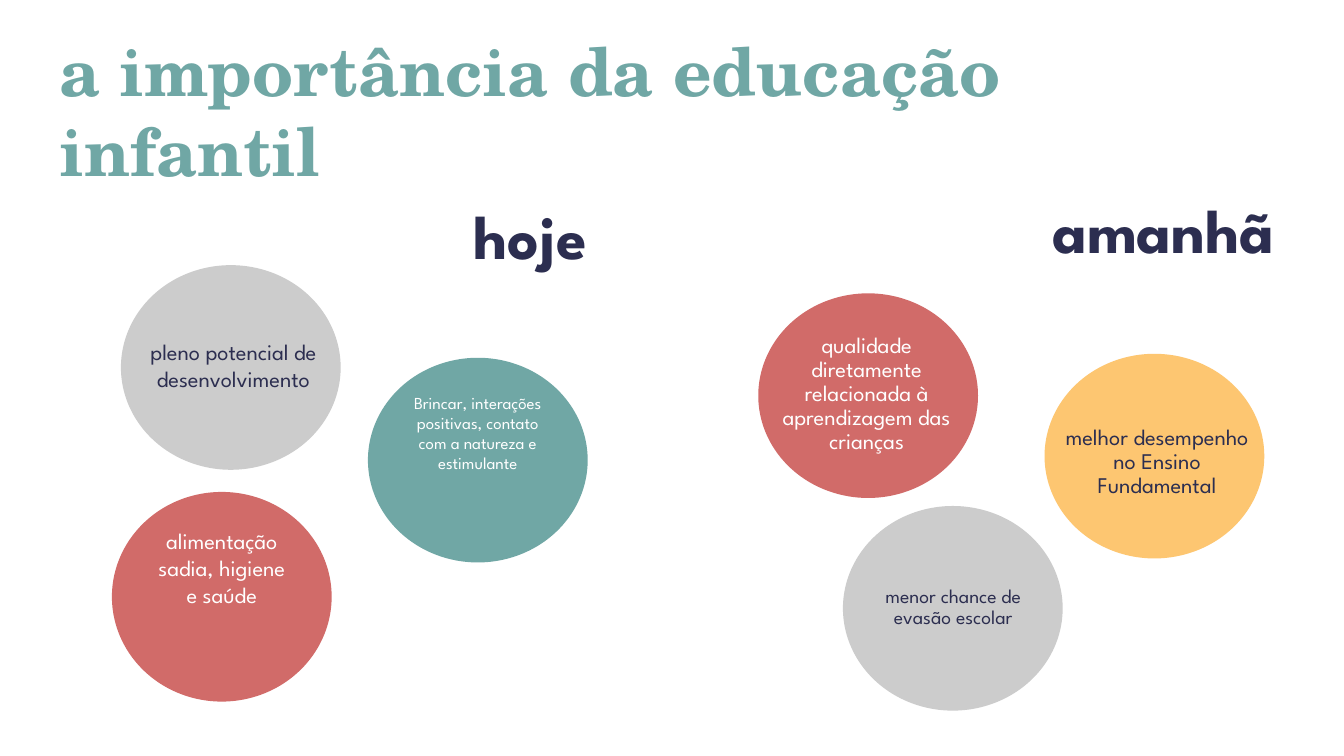
from pptx import Presentation
from pptx.dml.color import RGBColor as RGB
from pptx.enum.shapes import MSO_SHAPE as Preset
from pptx.enum.text import MSO_ANCHOR as Anchor, PP_ALIGN as Align
from pptx.util import Inches, Pt

THEME = {
    "teal": RGB(0x70, 0xA7, 0xA5),
    "navy": RGB(0x2C, 0x2E, 0x50),
    "gray": RGB(0xCC, 0xCC, 0xCC),
    "red": RGB(0xD1, 0x6B, 0x69),
    "yellow": RGB(0xFD, 0xC6, 0x71),
    "white": RGB(0xFF, 0xFF, 0xFF),
    "serif": "TeX Gyre Schola",
    "sans": "League Spartan",
    "title": 48,
    "heading": 44,
    "body": 16,
    "small": 14,
    "tiny": 12,
}

deck = Presentation()
deck.slide_width, deck.slide_height = Inches(13.33), Inches(7.5)
slide = deck.slides.add_slide(deck.slide_layouts[6])


def place(left, top, width, height):
    column, row = deck.slide_width / 100, deck.slide_height / 100
    return int(left * column), int(top * row), int(width * column), int(height * row)


def write(holder, words, size, color, font="sans", bold=False, align=Align.CENTER,
          anchor=Anchor.TOP, inset=None, spacing=None):
    frame = holder.text_frame
    frame.word_wrap = True
    frame.vertical_anchor = anchor
    if inset is not None:
        frame.margin_left = frame.margin_right = Inches(inset)
        frame.margin_top = frame.margin_bottom = Inches(inset)
    line = frame.paragraphs[0]
    line.alignment = align
    if spacing:
        line.line_spacing = spacing
    run = line.add_run()
    run.text = words
    run.font.name = THEME[font]
    run.font.size = Pt(THEME[size])
    run.font.bold = bold
    run.font.color.rgb = THEME[color]


title = slide.shapes.add_textbox(*place(3.45, 8.93, 83.8, 11.2))
write(title, "a importância da educação infantil", "title", "teal", "serif", True,
      Align.LEFT, Anchor.MIDDLE, 0.13)

for moment, left, top in [("hoje", 34.51, 26.67), ("amanhã", 77.57, 25.87)]:
    heading = slide.shapes.add_textbox(*place(left, top, 22.28, 12.4))
    write(heading, moment, "heading", "navy", bold=True, align=Align.LEFT, spacing=0.9)

CIRCLE_WIDTH, CIRCLE_HEIGHT = 16.35, 27.07
benefits = [
    (9, 35.07, CIRCLE_HEIGHT, "gray", "pleno potencial de desenvolvimento",
     "body", "navy", (9.98, 41.73, 14.78, 13.07), 0, None),
    (27.38, 47.33, CIRCLE_HEIGHT, "teal",
     "Brincar, interações positivas, contato com a natureza e estimulante",
     "tiny", "white", None, None, None),
    (8.33, 65.07, 27.73, "red", "alimentação sadia, higiene e saúde",
     "body", "white", None, None, None),
    (56.42, 38.8, CIRCLE_HEIGHT, "red",
     "qualidade diretamente relacionada à aprendizagem das crianças",
     "body", "white", (57.09, 45.6, 14.78, 13.07), 0, 0.9),
    (62.72, 66.93, CIRCLE_HEIGHT, "gray", "menor chance de evasão escolar",
     "small", "navy", (64.14, 74.27, 13.58, 12.13), 0, 0.9),
    (77.72, 46.8, CIRCLE_HEIGHT, "yellow", "melhor desempenho no Ensino Fundamental",
     "body", "navy", (77.5, 50.53, 17.18, 21.2), 0.13, 0.9),
]
for left, top, height, fill, benefit, size, ink, label_area, inset, spacing in benefits:
    circle = slide.shapes.add_shape(Preset.OVAL, *place(left, top, CIRCLE_WIDTH, height))
    circle.shadow.inherit = False
    circle.fill.solid()
    circle.fill.fore_color.rgb = THEME[fill]
    circle.line.fill.background()
    if label_area:
        label = slide.shapes.add_textbox(*place(*label_area))
        write(label, benefit, size, ink, anchor=Anchor.MIDDLE, inset=inset, spacing=spacing)
    else:
        write(circle, benefit, size, ink)

deck.save("out.pptx")
